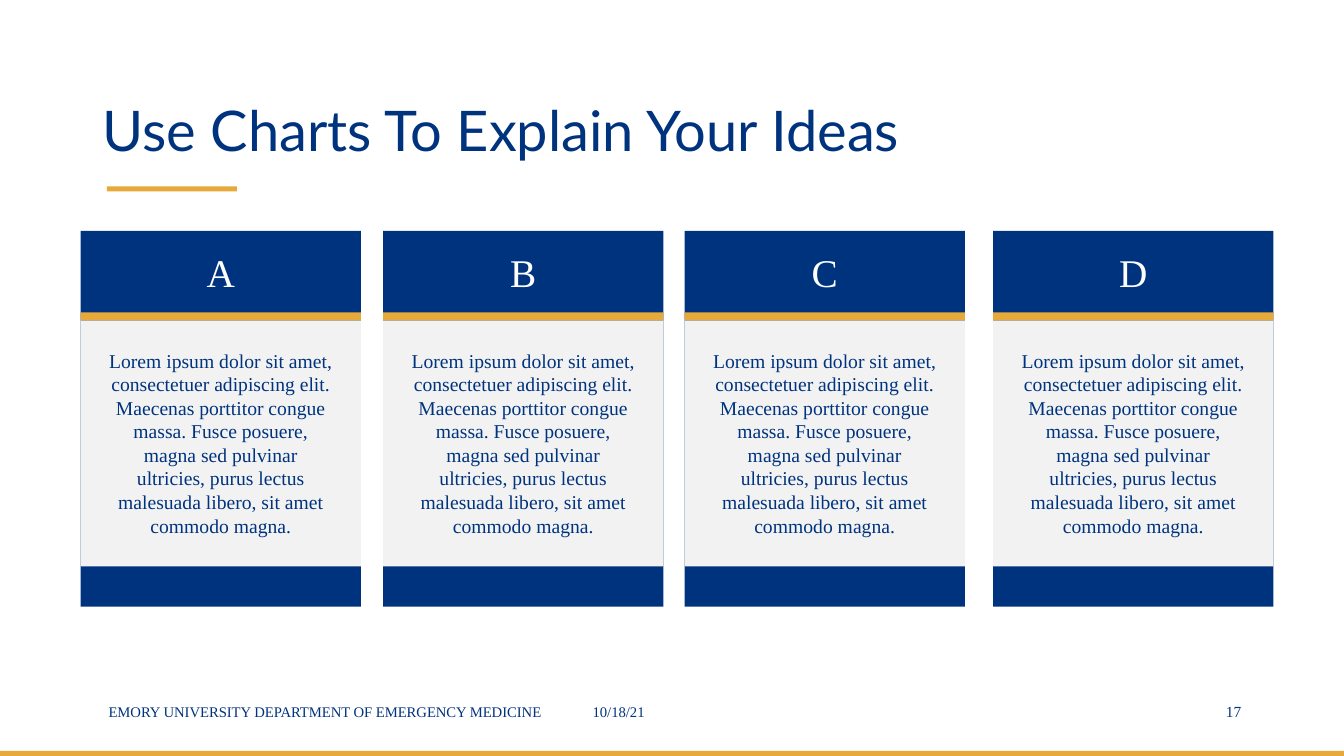
from pptx import Presentation
from pptx.dml.color import RGBColor
from pptx.enum.shapes import MSO_SHAPE
from pptx.enum.text import MSO_ANCHOR as ANCHOR, PP_ALIGN as ALIGN

PX = 9144  # 100 px to the inch
NAVY, GOLD, GREY, WHITE = "00337E", "E7A93A", "F2F2F2", "FFFFFF"
SERIF = "Times New Roman"
BODY = ("Lorem ipsum dolor sit amet, consectetuer adipiscing elit. "
        "Maecenas porttitor congue massa. Fusce posuere, magna sed pulvinar "
        "ultricies, purus lectus malesuada libero, sit amet commodo magna.")
CARDS = {"A": 80, "B": 380, "C": 679, "D": 985}  # heading: left edge


def emu(*lengths):
    return [n * PX for n in lengths]


def color(value):
    return RGBColor.from_string(value)


def add_bar(s, x, y, w, h, fill):
    sp = s.shapes.add_shape(MSO_SHAPE.RECTANGLE, *emu(x, y, w, h))
    sp.shadow.inherit = False
    sp.fill.solid()
    sp.fill.fore_color.rgb = color(fill)
    sp.line.fill.background()


def write(sp, text, size, font=SERIF, fill=NAVY, align=ALIGN.LEFT,
          anchor=ANCHOR.TOP):
    """Set a shape's single paragraph and its formatting."""
    tf = sp.text_frame
    tf.word_wrap = True
    tf.vertical_anchor = anchor
    tf.text = text
    p = tf.paragraphs[0]
    p.alignment = align
    f = p.runs[0].font
    f.name, f.size = font, int(size * 12700)
    f.color.rgb = color(fill)
    return tf


def add_text(s, x, y, w, h, text, size, **style):
    return write(s.shapes.add_textbox(*emu(x, y, w, h)), text, size, **style)


def add_title(s, x, y, w, h):
    title = s.shapes.title
    title.left, title.top, title.width, title.height = emu(x, y, w, h)
    tf = write(title, "Use Charts To Explain Your Ideas", 40, font="Lato",
               anchor=ANCHOR.BOTTOM)
    tf.paragraphs[0].line_spacing = 0.9
    add_bar(s, x + 14, y + h + 18, 129, 5, GOLD)


def add_card(s, x, y, w, h, heading):
    add_bar(s, x, y, w, h, NAVY)
    add_bar(s, x, y + 89, w, h - 129, GREY)
    add_text(s, x + 39, y + 12, w - 78, 57, heading, 28, fill=WHITE,
             align=ALIGN.CENTER)
    add_bar(s, x, y + 81, w, 8, GOLD)
    add_text(s, x + 17, y + 112, w - 34, h - 175, BODY, 14,
             align=ALIGN.CENTER)


def add_footer(s, x, y, w, h):
    middle = ANCHOR.MIDDLE
    tf = add_text(s, x, y, 471, h,
                  "EMORY UNIVERSITY DEPARTMENT OF EMERGENCY MEDICINE", 10.5,
                  align=ALIGN.CENTER, anchor=middle)
    tf.margin_left = 0
    add_text(s, x + 486, y, 300, h, "10/18/21", 10.5, anchor=middle)
    add_text(s, x + w - 69, y, 69, h, "17", 11, align=ALIGN.RIGHT,
             anchor=middle)


def main():
    prs = Presentation()
    prs.slide_width, prs.slide_height = emu(1333, 750)
    s = prs.slides.add_slide(prs.slide_layouts[5])
    add_title(s, 92, 38, 1150, 129)
    add_bar(s, 0, 745, 1333, 5, GOLD)
    for heading, left in CARDS.items():
        add_card(s, left, 229, 278, 373, heading)
    add_footer(s, 92, 686, 1149, 40)
    prs.save("out.pptx")


if __name__ == "__main__":
    main()
